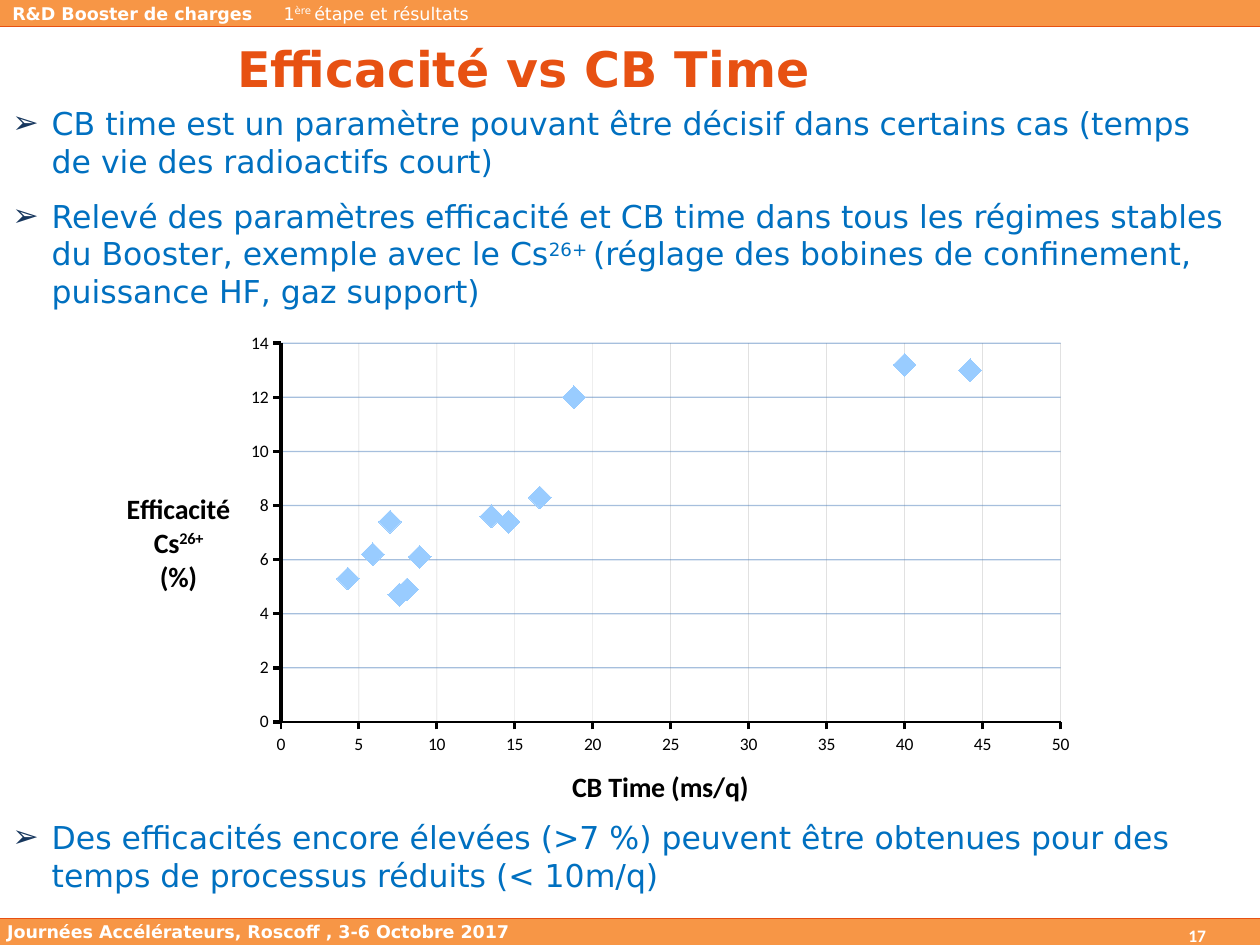
from dataclasses import dataclass

from lxml import etree
from pptx import Presentation
from pptx.chart.data import XyChartData
from pptx.dml.color import RGBColor
from pptx.enum.chart import XL_CHART_TYPE, XL_MARKER_STYLE, XL_TICK_MARK
from pptx.enum.shapes import MSO_CONNECTOR, MSO_SHAPE
from pptx.enum.text import MSO_ANCHOR, PP_ALIGN
from pptx.oxml import parse_xml
from pptx.oxml.ns import nsdecls, qn
from pptx.util import Pt

RECTANGLE, STRAIGHT = MSO_SHAPE.RECTANGLE, MSO_CONNECTOR.STRAIGHT
SCATTER, DIAMOND = XL_CHART_TYPE.XY_SCATTER, XL_MARKER_STYLE.DIAMOND
TICK_OUT, TICK_NONE = XL_TICK_MARK.OUTSIDE, XL_TICK_MARK.NONE
LEFT, CENTER = PP_ALIGN.LEFT, PP_ALIGN.CENTER
TOP, MIDDLE = MSO_ANCHOR.TOP, MSO_ANCHOR.MIDDLE

SANS, CALIBRI = "DejaVu Sans", "Calibri"
WHITE, BLACK, ORANGE, RED_ORANGE = "FFFFFF", "000000", "F79646", "E75112"
BLUE, NAVY, MARKER_BLUE = "0070C0", "17375E", "99CCFF"
WIDTH, HEIGHT = 720, 540
BAND_HEIGHT, INDENT = 15, 22.5

# (CB time, efficiency)
POINTS = [(7.6, 4.7), (8.1, 4.9), (4.3, 5.3), (8.9, 6.1), (5.9, 6.2), (7, 7.4),
          (14.6, 7.4), (13.5, 7.6), (16.6, 8.3), (18.8, 12), (44.2, 13), (40, 13.2)]


@dataclass
class Run:
    text: str
    raised: bool = False


@dataclass
class TextBlock:
    left: float
    top: float
    width: float
    height: float
    paragraphs: list[list[Run]]
    size: float
    color: str = WHITE
    font: str = SANS
    bold: bool = False
    align: PP_ALIGN = LEFT
    anchor: MSO_ANCHOR = TOP
    bulleted: bool = False


@dataclass
class AxisStyle:
    title: list[list[Run]]
    title_left: float
    title_top: float
    maximum: float
    step: float
    line_width: float
    grid_color: str
    grid_width: float
    grid_opacity: int


def rgb(color: str) -> RGBColor:
    return RGBColor.from_string(color)


def style_font(font, name: str, size: float, color: str, bold: bool) -> None:
    font.name, font.size, font.bold = name, Pt(size), bold
    font.color.rgb = rgb(color)


def add_bullet(paragraph) -> None:
    properties = paragraph._p.get_or_add_pPr()
    properties.set("marL", str(Pt(INDENT)))
    properties.set("indent", str(-Pt(INDENT)))
    color = etree.SubElement(properties, qn("a:buClr"))
    etree.SubElement(color, qn("a:srgbClr")).set("val", NAVY)
    etree.SubElement(properties, qn("a:buFont")).set("typeface", SANS)
    etree.SubElement(properties, qn("a:buChar")).set("char", "➢")


def fill_text(text_frame, paragraphs: list[list[Run]], font: str, size: float,
              color: str, bold: bool, align: PP_ALIGN, bulleted: bool = False) -> None:
    for index, runs in enumerate(paragraphs):
        paragraph = text_frame.add_paragraph() if index else text_frame.paragraphs[0]
        paragraph.alignment = align
        if bulleted:
            add_bullet(paragraph)
            paragraph.space_after = Pt(6)
            if index:
                paragraph.space_before = Pt(3.6)
        for part in runs:
            run = paragraph.add_run()
            run.text = part.text
            style_font(run.font, font, size, color, bold)
            if part.raised:
                run.font._element.set("baseline", "30000")


def add_text(slide, block: TextBlock) -> None:
    shape = slide.shapes.add_textbox(Pt(block.left), Pt(block.top), Pt(block.width), Pt(block.height))
    text_frame = shape.text_frame
    text_frame.word_wrap = True
    text_frame.vertical_anchor = block.anchor
    fill_text(text_frame, block.paragraphs, block.font, block.size, block.color,
              block.bold, block.align, block.bulleted)


def add_band(slide, top: float, edge: float) -> None:
    band = slide.shapes.add_shape(RECTANGLE, 0, Pt(top), Pt(WIDTH), Pt(BAND_HEIGHT))
    band.shadow.inherit = False
    band.fill.solid()
    band.fill.fore_color.rgb = rgb(ORANGE)
    band.line.fill.background()
    rule = slide.shapes.add_connector(STRAIGHT, 0, Pt(edge), Pt(WIDTH), Pt(edge))
    rule.line.color.rgb = rgb(RED_ORANGE)
    rule.line.width = Pt(0.75)
    etree.SubElement(rule._element.spPr, qn("a:effectLst"))


def set_layout(parent, **values: float) -> None:
    """Place a chart part by fractions of the chart area."""
    target = '<c:layoutTarget val="inner"/>' if "w" in values else ""
    modes = '<c:xMode val="edge"/><c:yMode val="edge"/>'
    numbers = "".join(f'<c:{name} val="{value}"/>' for name, value in values.items())
    layout = parse_xml(f"<c:layout {nsdecls('c')}><c:manualLayout>{target}{modes}{numbers}"
                       "</c:manualLayout></c:layout>")
    for existing in parent.findall(qn("c:layout")):
        parent.remove(existing)
    text = parent.find(qn("c:tx"))
    parent.insert(0 if text is None else 1, layout)


def style_axis(axis, style: AxisStyle) -> None:
    axis.minimum_scale, axis.maximum_scale, axis.major_unit = 0, style.maximum, style.step
    axis.major_tick_mark, axis.minor_tick_mark = TICK_OUT, TICK_NONE
    axis.tick_labels.number_format = "0"
    axis.tick_labels.number_format_is_linked = False
    style_font(axis.tick_labels.font, CALIBRI, 10, BLACK, False)
    axis.format.line.color.rgb = rgb(BLACK)
    axis.format.line.width = Pt(style.line_width)
    axis.has_major_gridlines = True
    grid = axis.major_gridlines.format.line
    grid.color.rgb = rgb(style.grid_color)
    grid.width = Pt(style.grid_width)
    color = next(axis.major_gridlines._xAx.find(qn("c:majorGridlines")).iter(qn("a:srgbClr")))
    etree.SubElement(color, qn("a:alpha")).set("val", str(style.grid_opacity * 1000))
    title = axis.axis_title
    fill_text(title.text_frame, style.title, CALIBRI, 16, BLACK, True, CENTER)
    body = next(title._element.iter(qn("a:bodyPr")))
    body.set("rot", "0")
    body.set("vert", "horz")
    set_layout(title._element, x=style.title_left, y=style.title_top)


def add_scatter(slide) -> None:
    data = XyChartData()
    series_data = data.add_series("Series 1")
    for time, efficiency in POINTS:
        series_data.add_data_point(time, efficiency)
    chart = slide.shapes.add_chart(SCATTER, Pt(59), Pt(184.5), Pt(564), Pt(292.5), data).chart
    chart.has_legend = False
    chart.has_title = False
    style_font(chart.font, CALIBRI, 10, BLACK, False)
    chart.plots[0].vary_by_categories = False
    series = chart.plots[0].series[0]
    series.format.line.fill.background()
    series.marker.style, series.marker.size = DIAMOND, 13
    series.marker.format.fill.solid()
    series.marker.format.fill.fore_color.rgb = rgb(MARKER_BLUE)
    series.marker.format.line.fill.background()
    style_axis(chart.category_axis, AxisStyle(
        [[Run("CB Time (ms/q)")]], 0.47, 0.86, 50, 5, 1.5, "888888", 0.25, 39))
    style_axis(chart.value_axis, AxisStyle(
        [[Run("Efficacité")], [Run("Cs"), Run("26+", True)], [Run("(%)")]],
        0.02, 0.32, 14, 2, 2, "4F81BD", 0.75, 49))
    set_layout(chart._chartSpace.chart.plotArea, x=0.18, y=0.04, w=0.79, h=0.74)


def main() -> None:
    presentation = Presentation()
    presentation.slide_width, presentation.slide_height = Pt(WIDTH), Pt(HEIGHT)
    slide = presentation.slides.add_slide(presentation.slide_layouts[6])

    # Header and footer bands
    add_band(slide, 0, BAND_HEIGHT)
    add_band(slide, HEIGHT - BAND_HEIGHT, HEIGHT - BAND_HEIGHT)

    # Header, footer, title and bullets
    findings = [
        [Run("CB time est un paramètre pouvant être décisif dans certains cas "
             "(temps de vie des radioactifs court)")],
        [Run("Relevé des paramètres efficacité et CB time dans tous les régimes stables "
             "du Booster, exemple avec le Cs"), Run("26+ ", True),
         Run("(réglage des bobines de confinement, puissance HF, gaz support)")],
    ]
    conclusion = [[Run("Des efficacités encore élevées (>7 %) peuvent être obtenues pour des "
                       "temps de processus réduits (< 10m/q)")]]
    section = [[Run("1"), Run("ère ", True), Run("étape et résultats")]]
    footer = [[Run("Journées Accélérateurs, Roscoff , 3-6 Octobre 2017")]]
    for block in (
        TextBlock(0, -2, 598, 15, [[Run("R&D Booster de charges")]], 10, bold=True),
        TextBlock(155, -2, 385, 17, section, 10),
        TextBlock(-3, 523, 330, 19, footer, 10, bold=True),
        TextBlock(672, 525, 47, 15, [[Run("17")]], 10, font=CALIBRI, bold=True),
        TextBlock(0, 7, 598, 63, [[Run("Efficacité vs CB Time")]], 28, RED_ORANGE,
                  bold=True, align=CENTER, anchor=MIDDLE),
        TextBlock(0, 56, 715, 125, findings, 18, BLUE, bulleted=True),
        TextBlock(0, 464, 715, 52, conclusion, 18, BLUE, bulleted=True),
    ):
        add_text(slide, block)

    # Efficiency against CB time
    add_scatter(slide)
    presentation.save("out.pptx")


if __name__ == "__main__":
    main()
